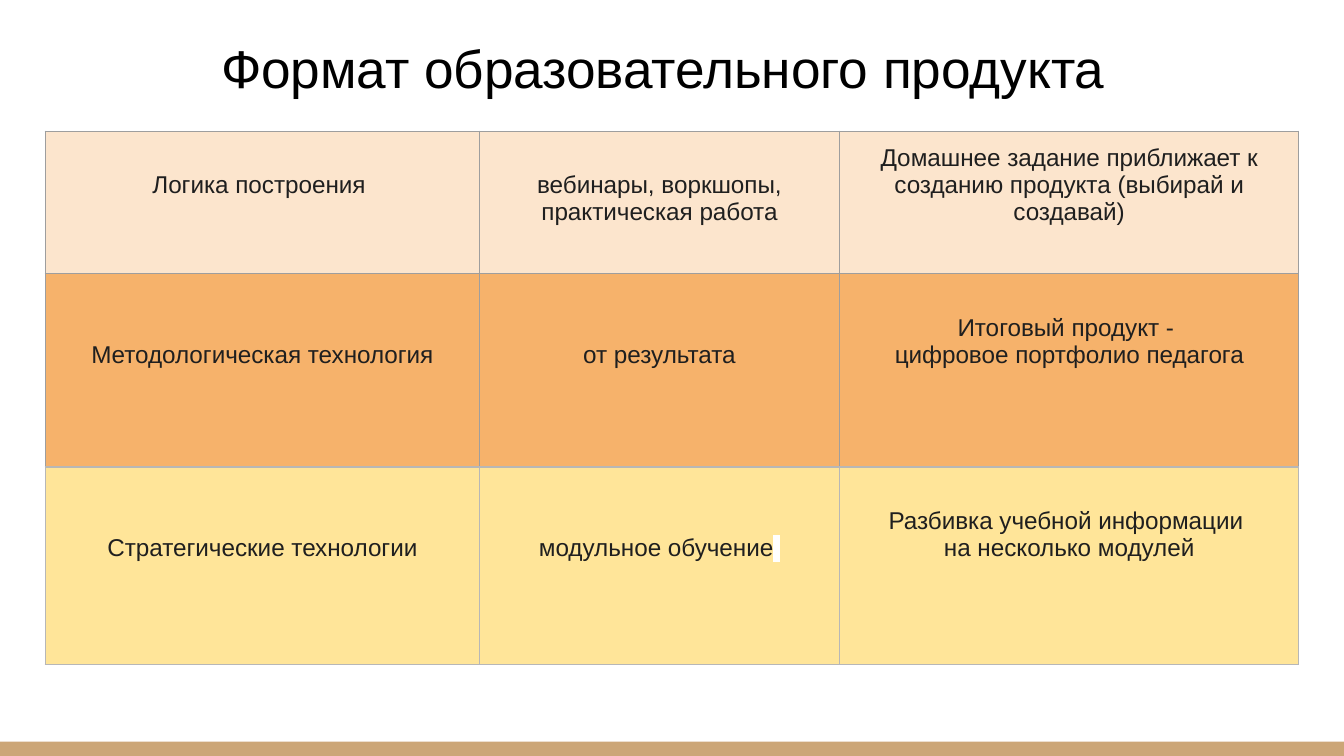
from dataclasses import dataclass

from lxml.etree import SubElement
from pptx import Presentation
from pptx.dml.color import RGBColor
from pptx.enum.shapes import MSO_SHAPE
from pptx.enum.text import MSO_ANCHOR, PP_ALIGN
from pptx.oxml import parse_xml
from pptx.oxml.ns import nsdecls, qn
from pptx.util import Pt


@dataclass(frozen=True)
class Theme:
    bar: str = "CCA677"
    title: str = "000000"
    text: str = "1F1F1F"
    mark: str = "FFFFFF"
    peach: str = "FCE5CD"
    orange: str = "F6B26B"
    yellow: str = "FFE599"
    dark_line: str = "9E9E9E"
    light_line: str = "B7B7B7"
    font: str = "Arial"
    title_space_font: str = "Lato"
    title_size: float = 28.5
    title_space_size: float = 37.8
    cell_size: float = 13
    cell_line: float = 14.5
    inset: float = 7.2


@dataclass(frozen=True)
class Cell:
    lines: tuple[str, ...]
    skip: int = 0  # text lines left free above
    marked_end: bool = False


@dataclass(frozen=True)
class Row:
    height: float
    fill: str
    line: str
    bottom: str
    cells: tuple[Cell, ...]


T = Theme()
COLS = (232.5, 193, 246)
ROWS = (
    Row(76.5, T.peach, T.dark_line, T.dark_line, (
        Cell(("Логика построения ",), 1),
        Cell(("вебинары, воркшопы, практическая работа",), 1),
        Cell(("Домашнее задание приближает к созданию продукта (выбирай и создавай)",)),
    )),
    Row(103.5, T.orange, T.dark_line, T.light_line, (
        Cell(("Методологическая технология",), 2),
        Cell(("от результата",), 2),
        Cell(("Итоговый продукт - ", "цифровое портфолио педагога"), 1),
    )),
    Row(106, T.yellow, T.light_line, T.light_line, (
        Cell(("Стратегические технологии",), 2),
        Cell(("модульное обучение",), 2, marked_end=True),
        Cell(("Разбивка учебной информации ", "на несколько модулей"), 1),
    )),
)


def add_run(p, text: str, *, size: float, color: str, font: str = T.font,
            highlight: str | None = None) -> None:
    r = p.add_run()
    r.text = text
    r.font.size = Pt(size)
    r.font.name = font
    r.font.color.rgb = RGBColor.from_string(color)
    if highlight:
        hl = parse_xml(f'<a:highlight {nsdecls("a")}><a:srgbClr val="{highlight}"/></a:highlight>')
        r.font.fill  # colour is already set, so the highlight follows it
        r._r.rPr.find(qn("a:solidFill")).addnext(hl)


def set_insets(box, top: float = T.inset) -> None:
    box.margin_left = box.margin_right = box.margin_bottom = Pt(T.inset)
    box.margin_top = Pt(top)


def set_borders(cell, line: str, bottom: str) -> None:
    tc_pr = cell._tc.get_or_add_tcPr()
    for i, side in enumerate("LRTB"):
        ln = tc_pr.makeelement(qn(f"a:ln{side}"), {"w": str(Pt(0.75))})
        fill = SubElement(ln, qn("a:solidFill"))
        SubElement(fill, qn("a:srgbClr"), val=bottom if side == "B" else line)
        tc_pr.insert(i, ln)


def fill_cell(cell, item: Cell, row: Row) -> None:
    cell.fill.solid()
    cell.fill.fore_color.rgb = RGBColor.from_string(row.fill)
    set_borders(cell, row.line, row.bottom)
    set_insets(cell, T.inset + item.skip * T.cell_line)
    tf = cell.text_frame
    for i, line in enumerate(item.lines):
        p = tf.add_paragraph() if i else tf.paragraphs[0]
        p.alignment = PP_ALIGN.CENTER
        add_run(p, line, size=T.cell_size, color=T.text)
    if item.marked_end:
        add_run(p, " ", size=T.cell_size, color=T.text, highlight=T.mark)


def add_title(s, text: str) -> None:
    tf = s.shapes.add_textbox(Pt(24.5), Pt(16), Pt(671), Pt(46.5)).text_frame
    tf.word_wrap = True
    tf.vertical_anchor = MSO_ANCHOR.BOTTOM
    set_insets(tf)
    p = tf.paragraphs[0]
    p.alignment = PP_ALIGN.CENTER
    add_run(p, text, size=T.title_size, color=T.title)
    add_run(p, " ", size=T.title_space_size, color=T.title, font=T.title_space_font)


def add_format_table(s) -> None:
    height = sum(row.height for row in ROWS)
    table = s.shapes.add_table(len(ROWS), len(COLS), Pt(24.25), Pt(70.25),
                               Pt(sum(COLS)), Pt(height)).table
    table.first_row = table.horz_banding = False
    for col, width in zip(table.columns, COLS):
        col.width = Pt(width)
    for i, row in enumerate(ROWS):
        table.rows[i].height = Pt(row.height)
        for j, item in enumerate(row.cells):
            fill_cell(table.cell(i, j), item, row)


def main() -> None:
    prs = Presentation()
    prs.slide_width, prs.slide_height = Pt(720), Pt(405)
    s = prs.slides.add_slide(prs.slide_layouts[6])

    # Bottom bar
    bar = s.shapes.add_shape(MSO_SHAPE.RECTANGLE, 0, Pt(397.25), Pt(720), Pt(7.75))
    bar.shadow.inherit = False
    bar.fill.solid()
    bar.fill.fore_color.rgb = RGBColor.from_string(T.bar)
    bar.line.fill.background()

    # Title and table
    add_title(s, "Формат образовательного продукта")
    add_format_table(s)

    prs.save("out.pptx")


if __name__ == "__main__":
    main()
